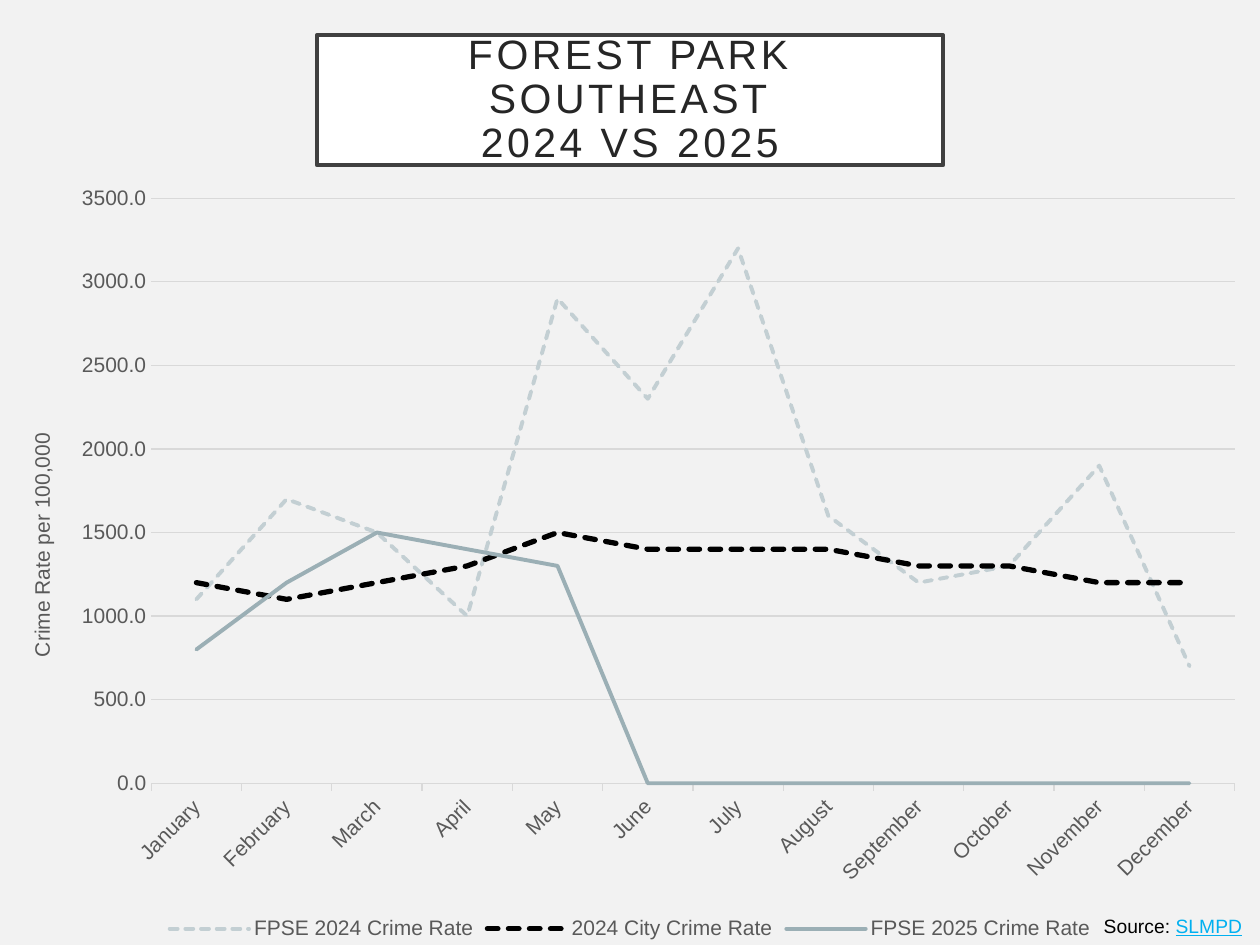
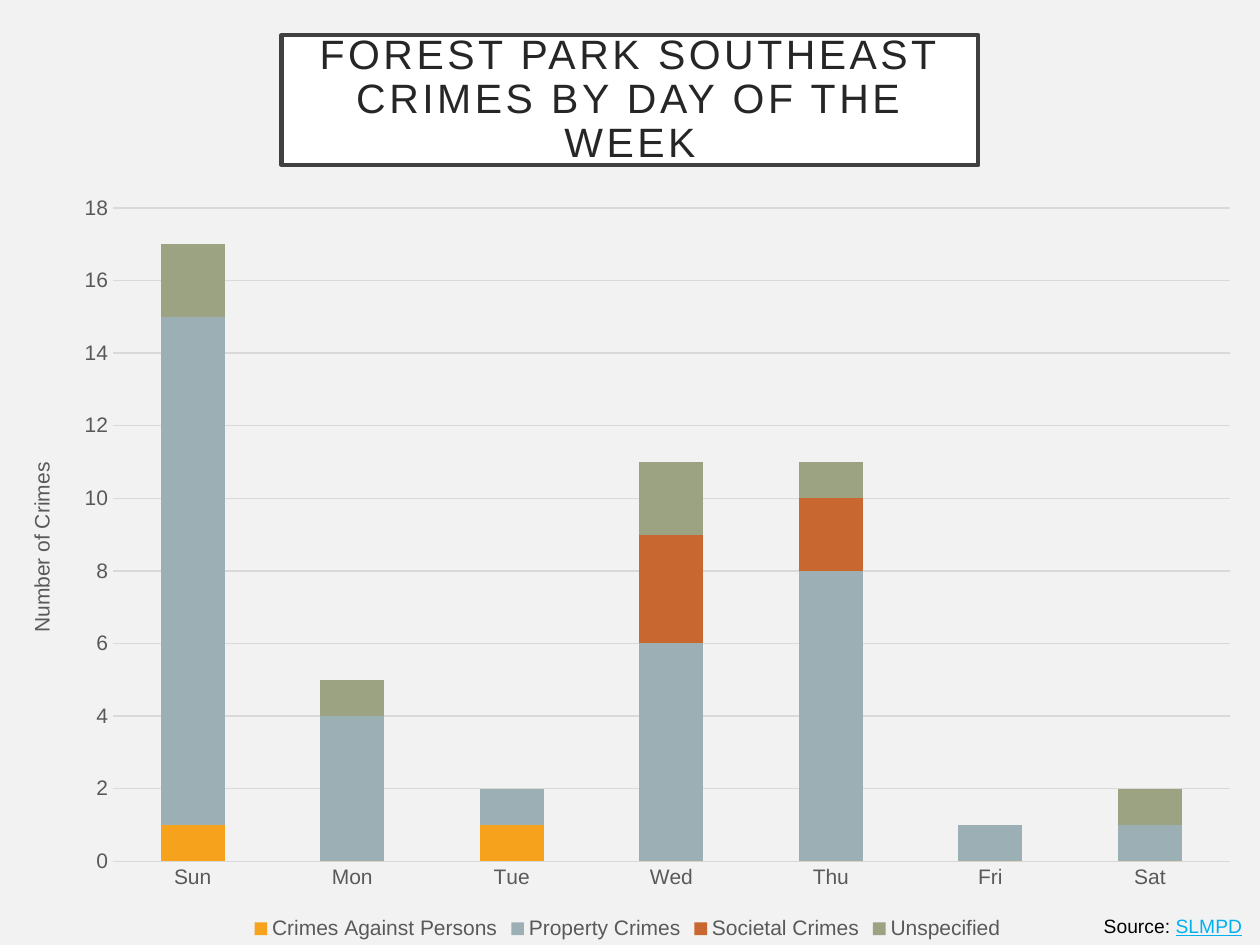
from lxml import etree
from pptx import Presentation
from pptx import util as u
from pptx.chart.data import CategoryChartData
from pptx.dml.color import RGBColor
from pptx.enum import chart as charts, dml, shapes, text
from pptx.oxml import ns

COLUMNS, ROWS = 100, 75
FONT = "Arial"
COLORS = {
    "page": "F2F2F2", "panel": "FFFFFF", "frame": "404040", "title": "262626",
    "body": "000000", "source": "00B0F0", "label": "595959", "grid": "D9D9D9",
    "last_year": "C3CFD3", "city": "000000", "slate": "9BAFB5",
    "amber": "F6A21D", "rust": "C96731", "sage": "9CA383",
}
MONTHS = ["January", "February", "March", "April", "May", "June", "July",
          "August", "September", "October", "November", "December"]
DAYS = ["Sun", "Mon", "Tue", "Wed", "Thu", "Fri", "Sat"]
# Each series: name, values, colour, then for lines the width and whether dashed
CRIME_RATES = [
    ("FPSE 2024 Crime Rate",
     [1100, 1700, 1500, 1000, 2900, 2300, 3200, 1600, 1200, 1300, 1900, 700],
     "last_year", 2.25, True),
    ("2024 City Crime Rate",
     [1200, 1100, 1200, 1300, 1500, 1400, 1400, 1400, 1300, 1300, 1200, 1200],
     "city", 3, True),
    ("FPSE 2025 Crime Rate",
     [800, 1200, 1500, 1400, 1300] + [None] * 7, "slate", 2.25, False),
]
CRIMES_BY_DAY = [
    ("Crimes Against Persons", [1, 0, 1, 0, 0, 0, 0], "amber"),
    ("Property Crimes", [14, 4, 1, 6, 8, 1, 1], "slate"),
    ("Societal Crimes", [0, 0, 0, 3, 2, 0, 0], "rust"),
    ("Unspecified", [2, 1, 0, 2, 1, 0, 1], "sage"),
]


def rgb(name):
    return RGBColor.from_string(COLORS[name])


def set_font(font, size, color, underline=None):
    font.name, font.size, font.bold = FONT, u.Pt(size), False
    font.color.rgb = rgb(color)
    if underline:
        font.underline = True


def write(para, words, spacing=None, **style):
    """Add words to a paragraph; a line feed becomes a line break."""
    for index, line in enumerate(words.split("\n")):
        if index:
            para.add_line_break()
        span = para.add_run()
        span.text = line
        set_font(span.font, **style)
        if spacing:
            span.font._element.set("spc", str(spacing * 100))


def set_layout(parent, before, **shares):
    """Fix a chart part at shares of the chart's size."""
    for old in parent.findall(ns.qn("c:layout")):
        parent.remove(old)
    layout = etree.Element(ns.qn("c:layout"))
    manual = etree.SubElement(layout, ns.qn("c:manualLayout"))
    if "w" in shares:
        etree.SubElement(manual, ns.qn("c:layoutTarget")).set("val", "inner")
    for mode in ("xMode", "yMode"):
        etree.SubElement(manual, ns.qn(f"c:{mode}")).set("val", "edge")
    for key, share in shares.items():
        etree.SubElement(manual, ns.qn(f"c:{key}")).set("val", str(share))
    parent.insert(before, layout)


class CrimeDeck:
    def __init__(self):
        self.deck = Presentation()
        self.deck.slide_width, self.deck.slide_height = u.Inches(10), u.Inches(7.5)
        self.page = None

    def place(self, left, top, width, height):
        """Turn columns and rows into lengths."""
        column = self.deck.slide_width / COLUMNS
        row = self.deck.slide_height / ROWS
        return [round(n) for n in
                (left * column, top * row, width * column, height * row)]

    def add_page(self, title, title_width):
        self.page = self.deck.slides.add_slide(self.deck.slide_layouts[6])
        self.page.background.fill.solid()
        self.page.background.fill.fore_color.rgb = rgb("page")
        self.add_title(title, title_width)

    def add_title(self, words, width):
        box = self.page.shapes.add_shape(
            shapes.MSO_SHAPE.RECTANGLE,
            *self.place((COLUMNS - width) / 2, 2.8, width, 10.3))
        box.shadow.inherit = False
        box.fill.solid()
        box.fill.fore_color.rgb = rgb("panel")
        box.line.color.rgb, box.line.width = rgb("frame"), u.Pt(2.5)
        frame = box.text_frame
        frame.word_wrap = True
        frame.vertical_anchor = text.MSO_ANCHOR.MIDDLE
        frame.margin_left = frame.margin_right = u.Inches(0.2)
        frame.margin_top = frame.margin_bottom = u.Inches(0.2)
        para = frame.paragraphs[0]
        para.alignment, para.line_spacing = text.PP_ALIGN.CENTER, 0.9
        write(para, words, spacing=2, size=23.4, color="title")

    def add_source(self):
        box = self.page.shapes.add_textbox(*self.place(86.6, 72.1, 13, 2.9))
        box.text_frame.word_wrap = True
        box.text_frame.auto_size = text.MSO_AUTO_SIZE.SHAPE_TO_FIT_TEXT
        para = box.text_frame.paragraphs[0]
        para.alignment = text.PP_ALIGN.CENTER
        write(para, "Source: ", size=11, color="body")
        write(para, "SLMPD", size=11, color="source", underline=True)

    def add_chart(self, kind, area, categories, series, plot_area):
        data = CategoryChartData()
        data.categories = categories
        for name, values, *_ in series:
            data.add_series(name, values)
        chart = self.page.shapes.add_chart(kind, *self.place(*area), data).chart
        chart.has_title = False
        set_font(chart.font, 12, "body")
        chart.has_legend = True
        chart.legend.position = charts.XL_LEGEND_POSITION.BOTTOM
        chart.legend.include_in_layout = False
        set_font(chart.legend.font, 12, "label")
        set_layout(chart.element.xpath(".//c:plotArea")[0], 0, **plot_area)
        return chart

    def style_axes(self, chart, title, title_top, top, step, number_format, ticks):
        across, up = chart.category_axis, chart.value_axis
        for axis in (across, up):
            set_font(axis.tick_labels.font, 12, "label")
            axis.major_tick_mark = axis.minor_tick_mark = charts.XL_TICK_MARK.NONE
        across.major_tick_mark = ticks
        up.has_major_gridlines = True
        for line in (across.format.line, up.major_gridlines.format.line):
            line.color.rgb, line.width = rgb("grid"), u.Pt(0.75)
        up.format.line.fill.background()
        up.minimum_scale, up.maximum_scale, up.major_unit = 0, top, step
        up.tick_labels.number_format = number_format
        up.tick_labels.number_format_is_linked = False
        write(up.axis_title.text_frame.paragraphs[0], title, size=12, color="label")
        body = chart.element.xpath(".//c:valAx/c:title//a:bodyPr")[0]
        body.set("rot", "-5400000")
        body.set("vert", "horz")
        set_layout(chart.element.xpath(".//c:valAx/c:title")[0], 1,
                   x=0.02, y=title_top)

    def add_line_chart(self, area, categories, series, plot_area, **axes):
        chart = self.add_chart(charts.XL_CHART_TYPE.LINE, area, categories,
                               series, plot_area)
        self.style_axes(chart, ticks=charts.XL_TICK_MARK.OUTSIDE, **axes)
        for plotted, (_, _, color, width, dashed) in zip(chart.plots[0].series, series):
            plotted.smooth = False
            line = plotted.format.line
            line.color.rgb, line.width = rgb(color), u.Pt(width)
            if dashed:
                line.dash_style = dml.MSO_LINE.SQUARE_DOT
        for outline in chart.element.xpath(".//c:ser/c:spPr/a:ln"):
            outline.set("cap", "rnd")
        chart.element.xpath(".//c:catAx/c:txPr/a:bodyPr")[0].set("rot", "-2700000")
        # Months without data run along the axis
        chart.element.xpath(".//c:dispBlanksAs")[0].set("val", "zero")

    def add_stacked_chart(self, area, categories, series, plot_area, **axes):
        chart = self.add_chart(charts.XL_CHART_TYPE.COLUMN_STACKED, area,
                               categories, series, plot_area)
        self.style_axes(chart, ticks=charts.XL_TICK_MARK.NONE, **axes)
        plot = chart.plots[0]
        plot.gap_width, plot.overlap, plot.vary_by_categories = 150, 100, False
        for plotted, (_, _, color) in zip(plot.series, series):
            plotted.format.fill.solid()
            plotted.format.fill.fore_color.rgb = rgb(color)


def main():
    show = CrimeDeck()

    show.add_page("FOREST PARK SOUTHEAST\n2024 VS 2025", 49.7)
    show.add_source()
    show.add_line_chart(
        (0, 13.9, 100, 61.1), MONTHS, CRIME_RATES,
        dict(x=0.12, y=0.03, w=0.86, h=0.76),
        title="Crime Rate per 100,000", title_top=0.33,
        top=3500, step=500, number_format="0.0")

    show.add_page("FOREST PARK SOUTHEAST\nCRIMES BY DAY OF THE WEEK", 55.3)
    show.add_source()
    show.add_stacked_chart(
        (0, 14.7, 99.6, 60.3), DAYS, CRIMES_BY_DAY,
        dict(x=0.09, y=0.03, w=0.89, h=0.86),
        title="Number of Crimes", title_top=0.36,
        top=18, step=2, number_format="General")

    show.deck.save("out.pptx")


if __name__ == "__main__":
    main()
